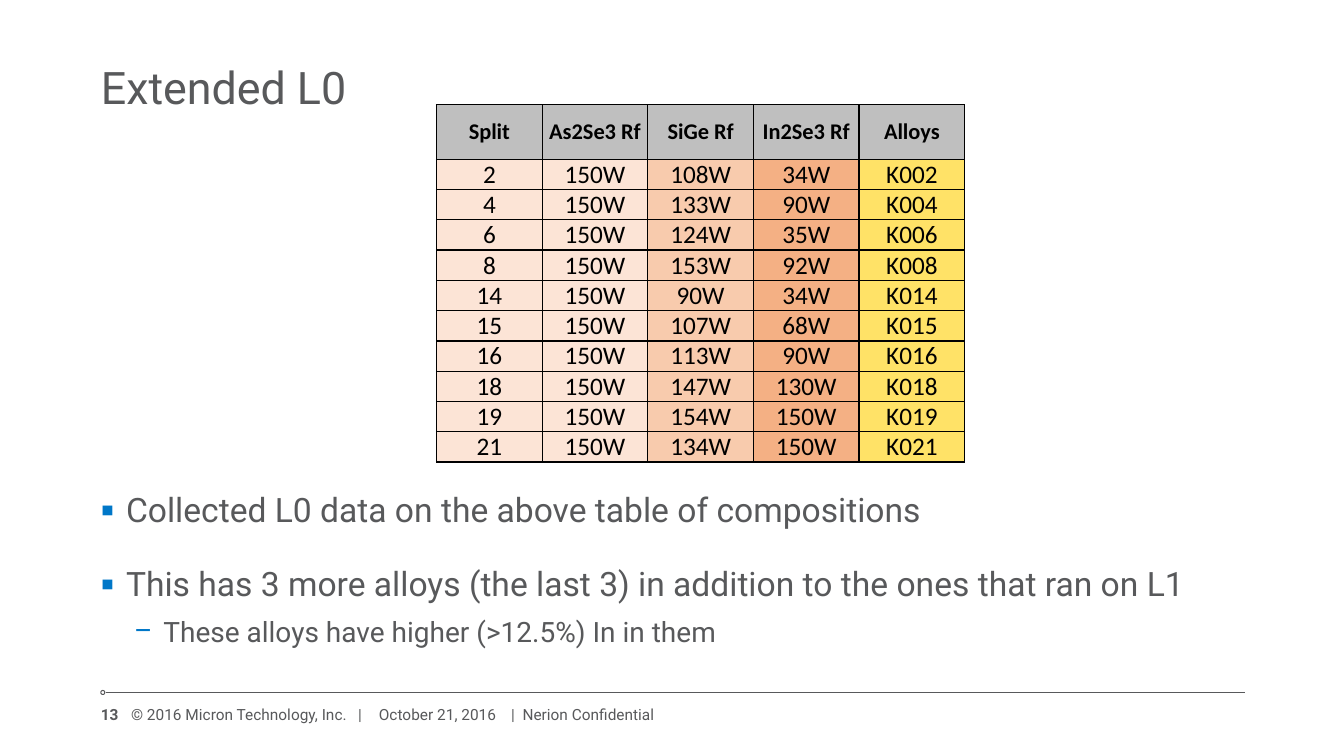
"""Build the Extended L0 slide: a table of alloy splits, notes and a footer."""
from pptx import Presentation
from pptx.dml.color import RGBColor
from pptx.enum.shapes import MSO_CONNECTOR, MSO_SHAPE
from pptx.enum.text import MSO_ANCHOR, PP_ALIGN
from pptx.oxml.ns import qn
from pptx.util import Inches, Pt
from lxml.etree import SubElement

GRAY, BLUE, BLACK = "58595B", "0077C8", "000000"
HEADER_FILL = "BFBFBF"
COLUMN_FILLS = ["FCE4D6", "FCE4D6", "F8CBAD", "F4B084", "FFE267"]
HEADERS = ["Split", "As2Se3 Rf", "SiGe Rf", "In2Se3 Rf", "Alloys"]
SPLITS = [
    ("2", "150W", "108W", "34W", "K002"),
    ("4", "150W", "133W", "90W", "K004"),
    ("6", "150W", "124W", "35W", "K006"),
    ("8", "150W", "153W", "92W", "K008"),
    ("14", "150W", "90W", "34W", "K014"),
    ("15", "150W", "107W", "68W", "K015"),
    ("16", "150W", "113W", "90W", "K016"),
    ("18", "150W", "147W", "130W", "K018"),
    ("19", "150W", "154W", "150W", "K019"),
    ("21", "150W", "134W", "150W", "K021"),
]
LEVELS = [
    {"mark": "▪", "left": 0.25, "hang": 0.25, "size": 24, "before": 16},
    {"mark": "–", "left": 0.62, "hang": 0.29, "size": 20, "before": 0},
]
NOTES = [
    (0, "Collected L0 data on the above table of compositions"),
    (0, "This has 3 more alloys (the last 3) in addition to the ones that ran on L1"),
    (1, "These alloys have higher (>12.5%) In in them"),
]
FOOTER = [
    ("13", 1, 0.3, {"bold": True}),
    ("© 2016 Micron Technology, Inc.   |", 1.3, 2.36, {}),
    ("October 21, 2016", 3.6, 1.48, {"align": PP_ALIGN.CENTER}),
    ("|  Nerion Confidential", 5.07, 1.53, {}),
]


def color(value):
    return RGBColor.from_string(value)


def write(para, text, size=11, font="Roboto", ink=GRAY, bold=False, align=PP_ALIGN.LEFT):
    para.alignment = align
    span = para.add_run()
    span.text = text
    span.font.name, span.font.size, span.font.bold = font, Pt(size), bold
    span.font.color.rgb = color(ink)


def add_box(page, left, top, width, height, anchor=MSO_ANCHOR.TOP, bottom=0):
    box = page.shapes.add_textbox(Inches(left), Inches(top), Inches(width), Inches(height))
    frame = box.text_frame
    frame.word_wrap = True
    frame.vertical_anchor = anchor
    frame.margin_left = frame.margin_top = frame.margin_right = 0
    frame.margin_bottom = Inches(bottom)
    return frame


def add_bullet(para, mark, left, hang):
    props = para._p.get_or_add_pPr()
    props.set("marL", str(Inches(left)))
    props.set("indent", str(-Inches(hang)))
    SubElement(SubElement(props, qn("a:buClr")), qn("a:srgbClr"), val=BLUE)
    SubElement(props, qn("a:buFont"), typeface="Roboto")
    SubElement(props, qn("a:buChar"), char=mark)


def add_notes(page):
    frame = add_box(page, 1, 4.85, 11.35, 1.84)
    for index, (level, text) in enumerate(NOTES):
        style = LEVELS[level]
        para = frame.add_paragraph() if index else frame.paragraphs[0]
        para.level = level
        add_bullet(para, style["mark"], style["left"], style["hang"])
        para.space_before = Pt(style["before"] if index else 0)
        para.space_after = Pt(8)
        write(para, text, size=style["size"])


def style_cell(cell, text, fill, size, bold):
    cell.margin_left = cell.margin_top = cell.margin_right = cell.margin_bottom = 0
    cell.vertical_anchor = MSO_ANCHOR.MIDDLE
    write(cell.text_frame.paragraphs[0], text, size=size, font="Calibri",
          ink=BLACK, bold=bold, align=PP_ALIGN.CENTER)
    props = cell._tc.get_or_add_tcPr()
    for side in ("a:lnL", "a:lnR", "a:lnT", "a:lnB"):
        border = SubElement(props, qn(side), w=str(Pt(1)))
        SubElement(SubElement(border, qn("a:solidFill")), qn("a:srgbClr"), val=BLACK)
    cell.fill.solid()
    cell.fill.fore_color.rgb = color(fill)


def add_split_table(page):
    rows = [HEADERS] + SPLITS
    table = page.shapes.add_table(len(rows), len(HEADERS), Inches(4.33), Inches(1.04),
                                  Inches(5.24), Inches(3.54)).table
    table.first_row = table.horz_banding = False
    for column in table.columns:
        column.width = Inches(5.24 / len(HEADERS))
    for r, values in enumerate(rows):
        table.rows[r].height = Inches(0.3 if r else 0.54)
        for c, text in enumerate(values):
            fill = COLUMN_FILLS[c] if r else HEADER_FILL
            style_cell(table.cell(r, c), text, fill, size=18 if r else 16, bold=r == 0)


def add_footer(page):
    ring = page.shapes.add_shape(MSO_SHAPE.OVAL, Inches(1), Inches(6.85),
                                 Inches(0.04), Inches(0.04))
    ring.shadow.inherit = False
    ring.fill.background()
    rule = page.shapes.add_connector(MSO_CONNECTOR.STRAIGHT, Inches(1.05), Inches(6.87),
                                     Inches(12.35), Inches(6.87))
    SubElement(rule._element.spPr, qn("a:effectLst"))
    for shape in (ring, rule):
        shape.line.color.rgb = color(GRAY)
        shape.line.width = Pt(0.75)
    for text, left, width, style in FOOTER:
        frame = add_box(page, left, 6.96, width, 0.25, anchor=MSO_ANCHOR.MIDDLE)
        write(frame.paragraphs[0], text, **style)


def main():
    deck = Presentation()
    deck.slide_width, deck.slide_height = Inches(13.33), Inches(7.5)
    page = deck.slides.add_slide(deck.slide_layouts[6])
    title = add_box(page, 1, 0.15, 11.35, 1.02, anchor=MSO_ANCHOR.BOTTOM, bottom=0.05)
    write(title.paragraphs[0], "Extended L0", size=32)
    add_notes(page)
    add_footer(page)
    add_split_table(page)
    deck.save("out.pptx")


if __name__ == "__main__":
    main()
